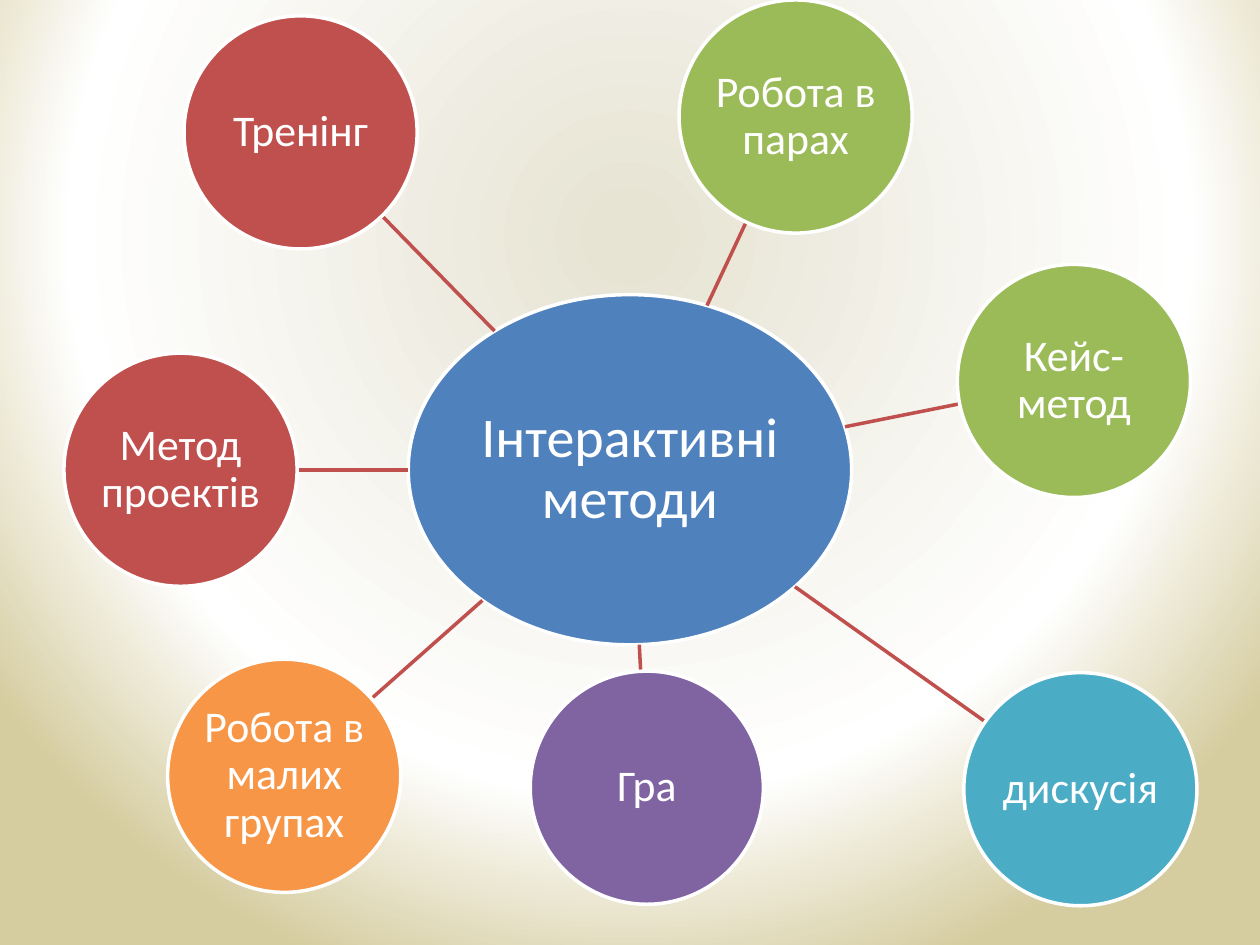
from math import hypot

from pptx import Presentation
from pptx.dml.color import RGBColor
from pptx.enum.shapes import MSO_CONNECTOR, MSO_SHAPE
from pptx.enum.text import MSO_ANCHOR as Anchor, PP_ALIGN as Align
from pptx.oxml import parse_xml
from pptx.oxml.ns import nsdecls, qn
from pptx.util import Cm, Pt

THEME = {
    "font": "Calibri", "hub_size": 32, "method_size": 25, "line_width": 2,
    "white": "FFFFFF", "blue": "4F81BD", "red": "C0504D", "green": "9BBB59",
    "purple": "8064A2", "teal": "4BACC6", "orange": "F79646",
    "background": [(3, "E7E4D4"), (71, "FFFFFF"), (100, "D5CC9F")],
}

# Centres and sizes in centimetres
HUB_TEXT = "Інтерактивні методи"
HUB_CENTER = (12.7, 9.47)
HUB_SIZE = (8.94, 7.06)
METHOD_SIZE = (4.7, 4.7)
METHODS = [
    ("Тренінг", (6.06, 2.67), "red"),
    ("Кейс-метод", (21.65, 7.68), "green"),
    ("Гра", (13.04, 15.88), "purple"),
    ("дискусія", (21.78, 15.91), "teal"),
    ("Робота в малих групах", (5.73, 15.64), "orange"),
    ("Метод проектів", (3.64, 9.47), "red"),
    ("Робота в парах", (16.04, 2.35), "green"),
]


def color(name):
    return RGBColor.from_string(THEME[name])


def set_background(slide):
    """Fill the slide with a circular gradient centred above its middle."""
    slide.background.fill.gradient()
    stops = "".join(
        f'<a:gs pos="{percent * 1000}"><a:srgbClr val="{value}"/></a:gs>'
        for percent, value in THEME["background"]
    )
    gradient = parse_xml(
        f'<a:gradFill {nsdecls("a")} rotWithShape="1"><a:gsLst>{stops}</a:gsLst>'
        '<a:path path="circle"><a:fillToRect l="20000" t="10000" r="20000" b="60000"/>'
        "</a:path></a:gradFill>"
    )
    placeholder = slide.element.find(".//" + qn("a:gradFill"))
    placeholder.getparent().replace(placeholder, gradient)


def write_text(shape, text, *, size, color_name="white", align=Align.CENTER, spacing=0.9):
    frame = shape.text_frame
    frame.word_wrap = True
    frame.vertical_anchor = Anchor.MIDDLE
    frame.margin_left = frame.margin_right = Cm(0.05)
    frame.margin_top = frame.margin_bottom = Cm(0.05)
    paragraph = frame.paragraphs[0]
    paragraph.alignment = align
    paragraph.line_spacing = spacing
    run = paragraph.add_run()
    run.text = text
    run.font.name = THEME["font"]
    run.font.size = Pt(size)
    run.font.color.rgb = color(color_name)


def add_ellipse(slide, text, center, size, fill, font_size):
    (x, y), (width, height) = center, size
    shape = slide.shapes.add_shape(
        MSO_SHAPE.OVAL, Cm(x - width / 2), Cm(y - height / 2), Cm(width), Cm(height)
    )
    shape.shadow.inherit = False
    shape.fill.solid()
    shape.fill.fore_color.rgb = color(fill)
    shape.line.color.rgb = color("white")
    shape.line.width = Pt(THEME["line_width"])
    write_text(shape, text, size=font_size)


def edge_point(center, size, target):
    """Return where the ray from an ellipse's centre to target leaves the ellipse."""
    dx, dy = target[0] - center[0], target[1] - center[1]
    scale = 1 / hypot(dx / (size[0] / 2), dy / (size[1] / 2))
    return center[0] + dx * scale, center[1] + dy * scale


def add_spoke(slide, center):
    start = edge_point(HUB_CENTER, HUB_SIZE, center)
    end = edge_point(center, METHOD_SIZE, HUB_CENTER)
    spoke = slide.shapes.add_connector(
        MSO_CONNECTOR.STRAIGHT, *(Cm(value) for value in start + end)
    )
    spoke.line.color.rgb = color("red")
    spoke.line.width = Pt(THEME["line_width"])
    spoke.element.spPr.append(parse_xml(f'<a:effectLst {nsdecls("a")}/>'))


def main():
    presentation = Presentation()
    presentation.slide_width, presentation.slide_height = Cm(25.4), Cm(19.05)
    slide = presentation.slides.add_slide(presentation.slide_layouts[6])
    set_background(slide)
    add_ellipse(slide, HUB_TEXT, HUB_CENTER, HUB_SIZE, "blue", THEME["hub_size"])
    for text, center, fill in METHODS:
        add_spoke(slide, center)
        add_ellipse(slide, text, center, METHOD_SIZE, fill, THEME["method_size"])
    presentation.save("out.pptx")


if __name__ == "__main__":
    main()
